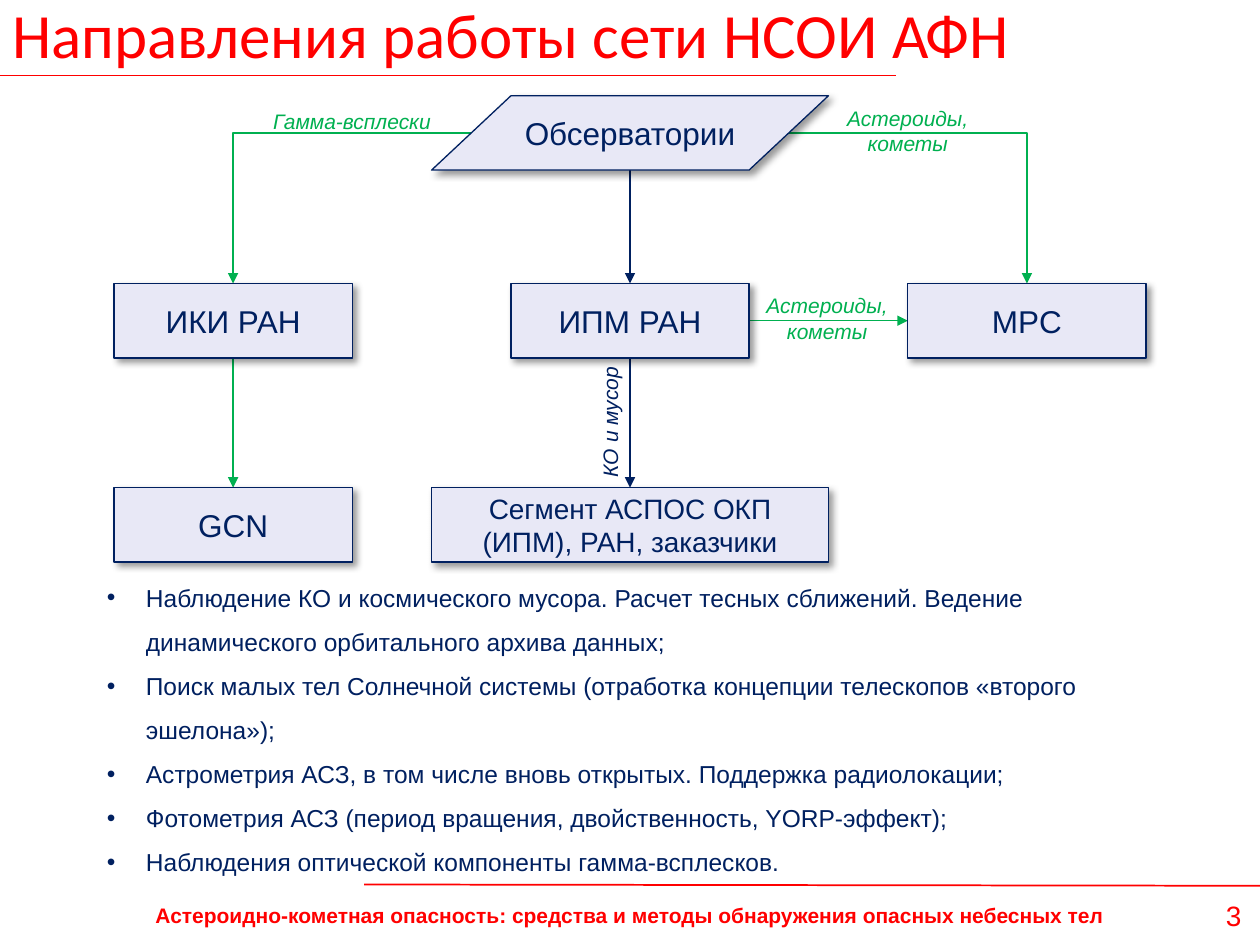
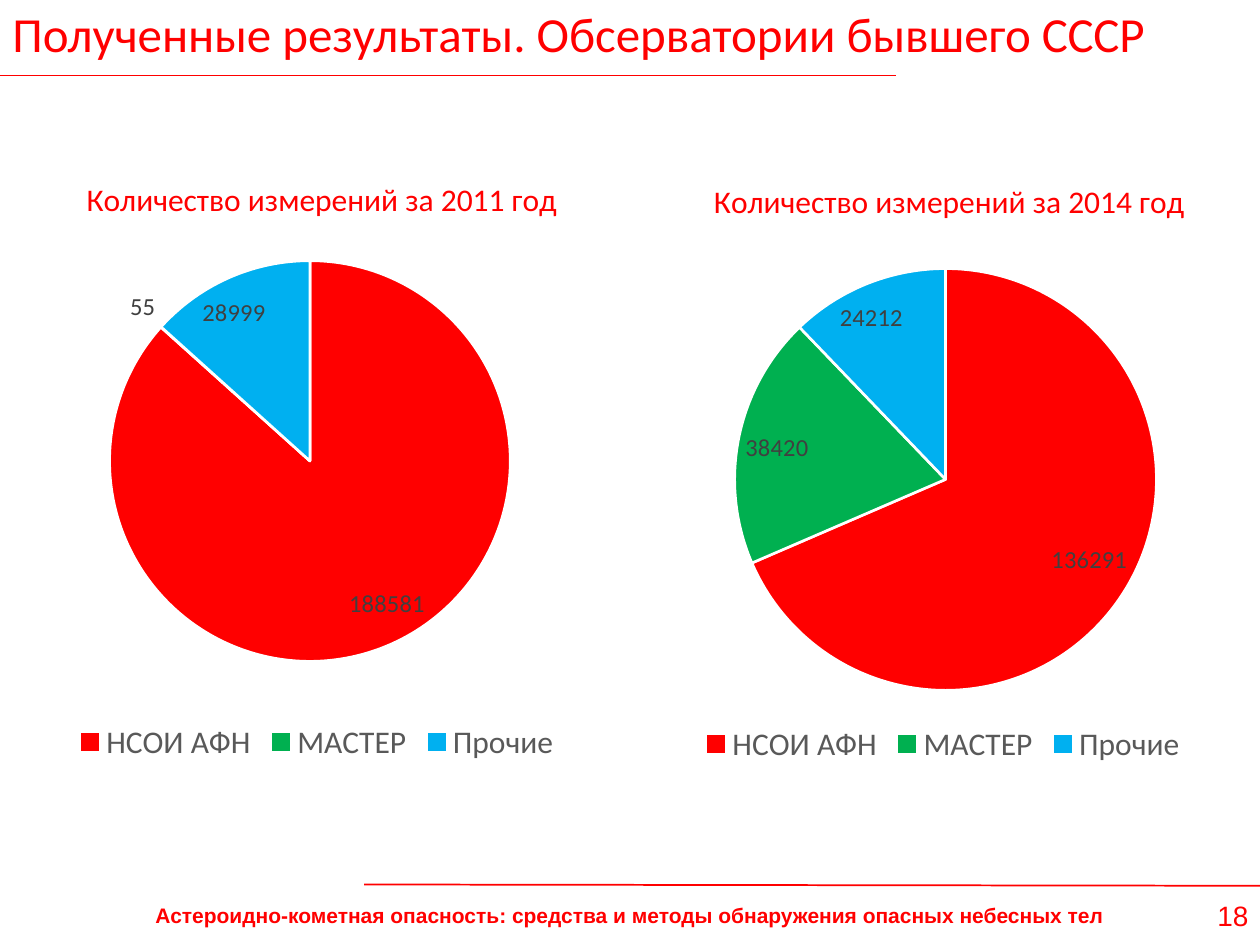
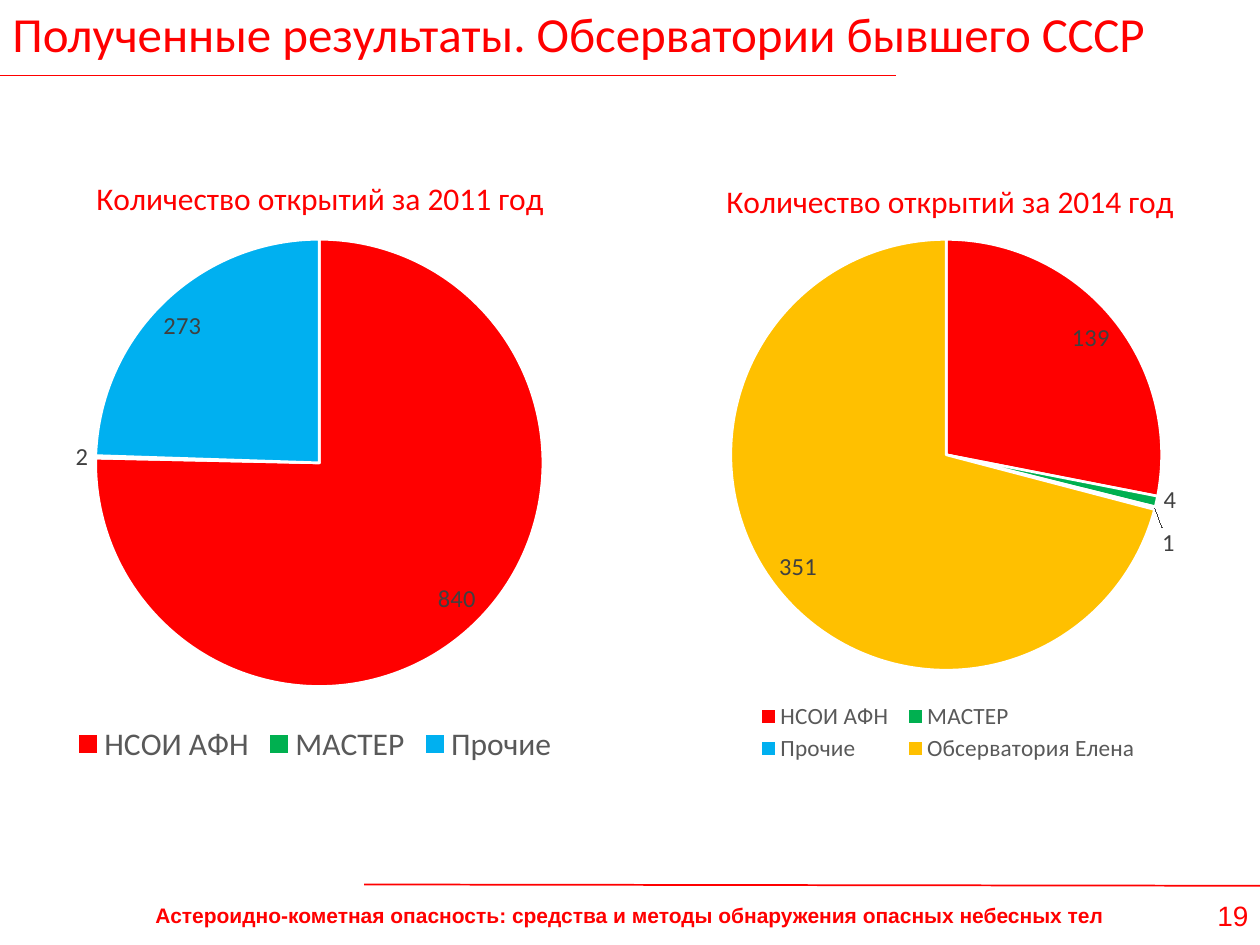
from lxml.etree import SubElement
from pptx import Presentation
from pptx.chart.data import CategoryChartData
from pptx.dml.color import RGBColor
from pptx.enum.chart import XL_CHART_TYPE, XL_LABEL_POSITION, XL_LEGEND_POSITION
from pptx.enum.shapes import MSO_CONNECTOR, MSO_SHAPE
from pptx.enum.text import MSO_ANCHOR, PP_ALIGN
from pptx.oxml import parse_xml
from pptx.oxml.ns import nsdecls, qn
from pptx.util import Inches, Pt

RED, GREEN, BLUE, AMBER = "FF0000", "00B050", "00B0F0", "FFC000"
NAVY, LAVENDER, WHITE = "002060", "E8E8F6", "FFFFFF"
LEGEND_GREY, LABEL_GREY = "595959", "404040"


def write(shape, text, size, colour, font="Arial", bold=False, italic=False,
          align=PP_ALIGN.CENTER, anchor=MSO_ANCHOR.MIDDLE):
    """Fill a shape with text, one paragraph per line, in a single style."""
    frame = shape.text_frame
    frame.text = text
    frame.word_wrap = True
    frame.vertical_anchor = anchor
    for paragraph in frame.paragraphs:
        paragraph.alignment = align
        for run in paragraph.runs:
            run.font.name, run.font.size = font, Pt(size)
            run.font.bold, run.font.italic = bold, italic
            run.font.color.rgb = RGBColor.from_string(colour)


def draw_line(slide, start, end, colour, width=0.75, arrow=True):
    """Draw a line; when both coordinates change, an arrow bends once."""
    bent = arrow and start[0] != end[0] and start[1] != end[1]
    kind = MSO_CONNECTOR.ELBOW if bent else MSO_CONNECTOR.STRAIGHT
    line = slide.shapes.add_connector(kind, *map(Inches, start + end))
    line.line.color.rgb = RGBColor.from_string(colour)
    line.line.width = Pt(width)
    properties = line._element.spPr
    if bent:
        properties.find(qn("a:prstGeom")).set("prst", "bentConnector2")
    if arrow:
        SubElement(properties.find(qn("a:ln")), qn("a:tailEnd"), type="triangle")
    SubElement(properties, qn("a:effectLst"))


presentation = Presentation()
presentation.slide_width, presentation.slide_height = Inches(10), Inches(7.5)

# Title, rules, footer and page number of every slide
RESULTS = "Полученные результаты. Обсерватории бывшего СССР"
FOOTER = "Астероидно-кометная опасность: средства и методы обнаружения опасных небесных тел"
slides = []
for title, title_size, number, number_left, number_width in [
    ("Направления работы сети НСОИ АФН", 36, "3", 9.58, 0.42),
    (RESULTS, 28, "18", 9.51, 0.55),
    (RESULTS, 28, "19", 9.51, 0.55),
]:
    slide = presentation.slides.add_slide(presentation.slide_layouts[6])
    slides.append(slide)
    heading = slide.shapes.add_textbox(0, 0, Inches(10), Inches(0.53))
    write(heading, title, title_size, RED, font="Calibri", align=PP_ALIGN.LEFT)
    draw_line(slide, (0, 0.6), (7.11, 0.6), RED, 0.99, arrow=False)
    draw_line(slide, (2.89, 7.02), (10, 7.03), RED, 0.99, arrow=False)
    footer = slide.shapes.add_textbox(0, Inches(7.11), Inches(10), Inches(0.31))
    write(footer, FOOTER, 12, RED, bold=True, anchor=MSO_ANCHOR.TOP)
    page = slide.shapes.add_textbox(
        Inches(number_left), Inches(7.08), Inches(number_width), Inches(0.37))
    write(page, number, 16, RED, anchor=MSO_ANCHOR.TOP)

# Data flow between the organisations
flow = slides[0]
LEFT, MIDDLE, RIGHT = 1.85, 5, 8.15
SOURCE_TOP, CENTRE_TOP, USER_TOP = 0.76, 2.25, 3.87
NODE_HEIGHT, NARROW, WIDE = 0.59, 1.89, 3.15

source_middle = SOURCE_TOP + NODE_HEIGHT / 2
centre_middle = CENTRE_TOP + NODE_HEIGHT / 2
centre_bottom = CENTRE_TOP + NODE_HEIGHT
for start, end, colour in [
    ((3.74, source_middle), (LEFT, CENTRE_TOP), GREEN),
    ((6.26, source_middle), (RIGHT, CENTRE_TOP), GREEN),
    ((MIDDLE, SOURCE_TOP + NODE_HEIGHT), (MIDDLE, CENTRE_TOP), NAVY),
    ((LEFT, centre_bottom), (LEFT, USER_TOP), GREEN),
    ((MIDDLE, centre_bottom), (MIDDLE, USER_TOP), NAVY),
    ((MIDDLE + NARROW / 2, centre_middle), (RIGHT - NARROW / 2, centre_middle), GREEN),
]:
    draw_line(flow, start, end, colour)

PROCESS, DATA = MSO_SHAPE.FLOWCHART_PROCESS, MSO_SHAPE.FLOWCHART_DATA
for text, kind, centre, top, width, size in [
    ("Обсерватории", DATA, MIDDLE, SOURCE_TOP, WIDE, 18),
    ("ИКИ РАН", PROCESS, LEFT, CENTRE_TOP, NARROW, 18),
    ("ИПМ РАН", PROCESS, MIDDLE, CENTRE_TOP, NARROW, 18),
    ("MPC", PROCESS, RIGHT, CENTRE_TOP, NARROW, 18),
    ("GCN", PROCESS, LEFT, USER_TOP, NARROW, 18),
    ("Сегмент АСПОС ОКП (ИПМ), РАН, заказчики", PROCESS, MIDDLE, USER_TOP, WIDE, 16),
]:
    node = flow.shapes.add_shape(
        kind, Inches(centre - width / 2), Inches(top), Inches(width), Inches(NODE_HEIGHT))
    node.fill.solid()
    node.fill.fore_color.rgb = RGBColor.from_string(LAVENDER)
    node.line.color.rgb = RGBColor.from_string(NAVY)
    node.line.width = Pt(0.75)
    node.shadow.inherit = False
    node._element.spPr.find(qn("a:effectLst")).append(parse_xml(
        f'<a:outerShdw {nsdecls("a")} blurRad="{Pt(4)}" dist="{Pt(3)}" dir="2700000" '
        'algn="tl" rotWithShape="0"><a:srgbClr val="000000"><a:alpha val="40000"/>'
        '</a:srgbClr></a:outerShdw>'))
    write(node, text, size, NAVY)

ASTEROIDS = "Астероиды, кометы"
for text, left, top, width, height, colour, rotation in [
    ("Гамма-всплески", 2.01, 0.84, 1.57, 0.24, GREEN, 0),
    (ASTEROIDS, 6.42, 0.81, 1.57, 0.45, GREEN, 0),
    (ASTEROIDS, 5.78, 2.3, 1.57, 0.45, GREEN, 0),
    ("КО и мусор", 4.28, 3.23, 1.12, 0.24, NAVY, 270),
]:
    flow_label = flow.shapes.add_textbox(*map(Inches, (left, top, width, height)))
    flow_label.rotation = rotation
    write(flow_label, text, 12, colour, italic=True)

tasks = flow.shapes.add_textbox(Inches(0.75), Inches(4.46), Inches(8.5), Inches(2.57))
write(tasks, "\n".join([
    "Наблюдение КО и космического мусора. Расчет тесных сближений. "
    "Ведение динамического орбитального архива данных;",
    "Поиск малых тел Солнечной системы (отработка концепции телескопов «второго эшелона»);",
    "Астрометрия АСЗ, в том числе вновь открытых. Поддержка радиолокации;",
    "Фотометрия АСЗ (период вращения, двойственность, YORP-эффект);",
    "Наблюдения оптической компоненты гамма-всплесков.",
]), 14, NAVY, align=PP_ALIGN.LEFT, anchor=MSO_ANCHOR.TOP)
for paragraph in tasks.text_frame.paragraphs:
    paragraph.line_spacing = 1.5
    indents = paragraph._p.get_or_add_pPr()
    indents.set("marL", str(Inches(0.31)))
    indents.set("indent", str(-Inches(0.31)))
    SubElement(indents, qn("a:buFont"), typeface="Arial")
    SubElement(indents, qn("a:buChar"), char="•")

# Pies: each has its frame, its title box and its circle, in slide inches
CHART_TOP = 1.15
NETWORKS = ["НСОИ АФН", "МАСТЕР", "Прочие", "Обсерватория Елена"]
NETWORK_COLOURS = [RED, GREEN, BLUE, AMBER]
MEASURED, FOUND = "Количество измерений за {} год", "Количество открытий за {} год"
for slide, title, title_left, title_top, values, frame, circle in [
    (slides[1], MEASURED.format(2011), 0.64, 1.36, (188581, 55, 28999),
     (0.03, 4.97, 4.94), (0.87, 2.07, 3.18)),
    (slides[1], MEASURED.format(2014), 5.62, 1.38, (136291, 38420, 24212),
     (5, 4.97, 4.96), (5.83, 2.13, 3.35)),
    (slides[2], FOUND.format(2011), 0.72, 1.36, (840, 2, 273),
     (0, 5, 4.96), (0.76, 1.9, 3.55)),
    (slides[2], FOUND.format(2014), 5.72, 1.38, (139, 4, 1, 351),
     (5, 5, 4.96), (5.8, 1.9, 3.42)),
]:
    left, width, height = frame
    data = CategoryChartData()
    data.categories = NETWORKS[:len(values)]
    data.add_series("Series 1", values)
    chart = slide.shapes.add_chart(
        XL_CHART_TYPE.PIE, *map(Inches, (left, CHART_TOP, width, height)), data).chart
    chart.font.name, chart.font.size = "Calibri", Pt(10)

    chart.has_title = True
    caption = chart.chart_title.text_frame.paragraphs[0]
    caption.text = title
    caption_font = caption.runs[0].font
    caption_font.name, caption_font.size, caption_font.bold = "Calibri", Pt(18), False
    caption_font.color.rgb = RGBColor.from_string(RED)

    two_rows = len(values) > 3
    chart.has_legend = True
    chart.legend.position = XL_LEGEND_POSITION.BOTTOM
    chart.legend.include_in_layout = False
    chart.legend.font.name = "Calibri"
    chart.legend.font.size = Pt(13.3 if two_rows else 18)
    chart.legend.font.color.rgb = RGBColor.from_string(LEGEND_GREY)

    pie = chart.plots[0]
    pie.vary_by_categories = True
    for index in range(len(values)):
        sector = pie.series[0].points[index].format
        sector.fill.solid()
        sector.fill.fore_color.rgb = RGBColor.from_string(NETWORK_COLOURS[index])
        sector.line.color.rgb = RGBColor.from_string(WHITE)
        sector.line.width = Pt(1.5)
    pie.has_data_labels = True
    labels = pie.data_labels
    labels.show_value = True
    labels.position = XL_LABEL_POSITION.BEST_FIT
    labels.font.name, labels.font.size = "Calibri", Pt(14)
    labels.font.color.rgb = RGBColor.from_string(LABEL_GREY)

    # Fixed places inside the chart, as fractions of its frame
    circle_left, circle_top, diameter = circle
    places = [
        (chart._chartSpace.chart.plotArea, 0, (circle_left, circle_top, diameter, diameter)),
        (chart.chart_title._element, 1, (title_left, title_top)),
    ]
    if two_rows:
        places.append((chart.legend._element, 1, (5.95, 5.54, 3.15, 0.55)))
    for part, position, box in places:
        for old_layout in part.findall(qn("c:layout")):
            part.remove(old_layout)
        layout = parse_xml(f'<c:layout {nsdecls("c")}/>')
        manual = SubElement(layout, qn("c:manualLayout"))
        if position == 0:
            SubElement(manual, qn("c:layoutTarget"), val="inner")
        for axis in "xy":
            SubElement(manual, qn(f"c:{axis}Mode"), val="edge")
        shares = ((box[0] - left) / width, (box[1] - CHART_TOP) / height)
        if len(box) == 4:
            shares += (box[2] / width, box[3] / height)
        for side, share in zip("xywh", shares):
            SubElement(manual, qn(f"c:{side}"), val=f"{share:.3f}")
        part.insert(position, layout)

presentation.save("out.pptx")
